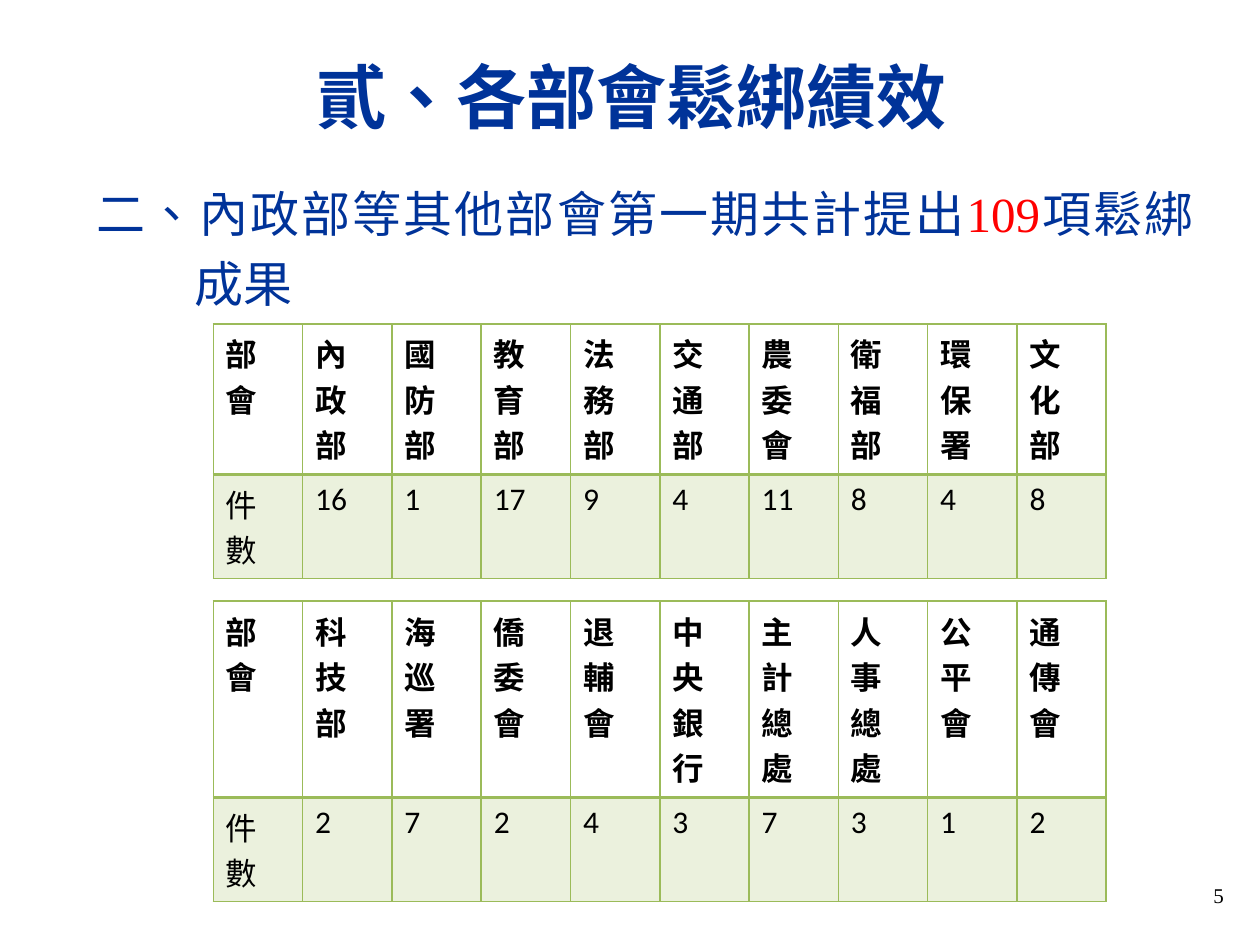
from lxml import etree
from pptx import Presentation
from pptx.dml.color import RGBColor
from pptx.enum.text import MSO_ANCHOR, PP_ALIGN
from pptx.oxml.ns import qn
from pptx.util import Cm, Pt

MID, TOP = MSO_ANCHOR.MIDDLE, MSO_ANCHOR.TOP
MIDST, RIGHT, JUST = PP_ALIGN.CENTER, PP_ALIGN.RIGHT, PP_ALIGN.JUSTIFY
SERIF, SANS = "Times New Roman", "Calibri"
NAVY, RED, BLACK, GREEN = "003399", "FF0000", "000000", "9BBB59"

TITLE = [("貳、各部會鬆綁績效", NAVY)]
LEAD = [
    ("二、內政部等其他部會第一期共計提出", NAVY),
    ("109", RED),
    ("項鬆綁成果", NAVY),
]
PAGE = [("5", BLACK)]
HEAD, COUNT = "部會", "件數"
TABLES = [
    (6.53, (3.03, 2.1), [
        ("內政部", 16), ("國防部", 1), ("教育部", 17),
        ("法務部", 9), ("交通部", 4), ("農委會", 11),
        ("衛福部", 8), ("環保署", 4), ("文化部", 8),
    ]),
    (12.12, (3.95, 2.1), [
        ("科技部", 2), ("海巡署", 7), ("僑委會", 2),
        ("退輔會", 4), ("中央銀行", 3), ("主計總處", 7),
        ("人事總處", 3), ("公平會", 1), ("通傳會", 2),
    ]),
]
LEFT, COL = 4.3, 1.8


def color(code):
    return RGBColor.from_string(code)


def add_text(slide, box, runs, size, align, anchor, bold=False):
    frame = slide.shapes.add_textbox(*map(Cm, box)).text_frame
    frame.word_wrap = True
    frame.vertical_anchor = anchor
    para = frame.paragraphs[0]
    para.alignment = align
    para.font.size, para.font.name, para.font.bold = Pt(size), SERIF, bold
    for text, code in runs:
        run = para.add_run()
        run.text = text
        run.font.color.rgb = color(code)
        run._r.get_or_add_rPr().set("lang", "zh-TW")
    return para


def set_lines(cell, widths):
    props = cell._tc.get_or_add_tcPr()
    for side, width in zip("LRTB", widths):
        line = etree.SubElement(props, qn(f"a:ln{side}"), w=str(Pt(width)))
        fill = etree.SubElement(line, qn("a:solidFill"))
        etree.SubElement(fill, qn("a:srgbClr"), val=GREEN)


def fill_cell(cell, lines, head):
    set_lines(cell, (1, 1, 1, 2) if head else (1, 1, 2, 1))
    if head:
        cell.fill.background()
    else:
        cell.fill.solid()
        cell.fill.fore_color.rgb = color(GREEN)
        tint = cell._tc.tcPr.find(qn("a:solidFill"))
        etree.SubElement(tint[0], qn("a:alpha"), val="20000")
    cell.text = "\n".join(lines)
    for para in cell.text_frame.paragraphs:
        font = para.font
        font.size, font.name, font.bold = Pt(18), SANS, head
        font.color.rgb = color(BLACK)


def add_grid(slide, top, rows, data):
    heads = [HEAD] + [name for name, _ in data]
    counts = [COUNT] + [str(value) for _, value in data]
    wide = len(heads)
    table = slide.shapes.add_table(
        2, wide, Cm(LEFT), Cm(top), Cm(COL * wide), Cm(sum(rows))).table
    table.first_row = table.horz_banding = False
    for row, high in zip(table.rows, rows):
        row.height = Cm(high)
    for i, (name, count) in enumerate(zip(heads, counts)):
        table.columns[i].width = Cm(COL)
        fill_cell(table.cell(0, i), list(name), True)
        fill_cell(table.cell(1, i), [count] if i else list(count), False)


def main():
    deck = Presentation()
    deck.slide_width, deck.slide_height = Cm(25.4), Cm(19.05)
    slide = deck.slides.add_slide(deck.slide_layouts[6])
    add_text(slide, (1.3, 0.33, 22.86, 3.18), TITLE, 40, MIDST, MID, True)
    lead = add_text(slide, (1.7, 3.33, 22.61, 14.6), LEAD, 28, JUST, TOP)
    lead.line_spacing = 1.2
    lead.space_after = Pt(3)
    props = lead._p.get_or_add_pPr()
    props.set("marL", str(Cm(1.98)))
    props.set("indent", str(-Cm(1.98)))
    add_text(slide, (19, 17.53, 5.92, 1.02), PAGE, 12, RIGHT, MID)
    for top, rows, data in TABLES:
        add_grid(slide, top, rows, data)
    deck.save("out.pptx")


if __name__ == "__main__":
    main()
